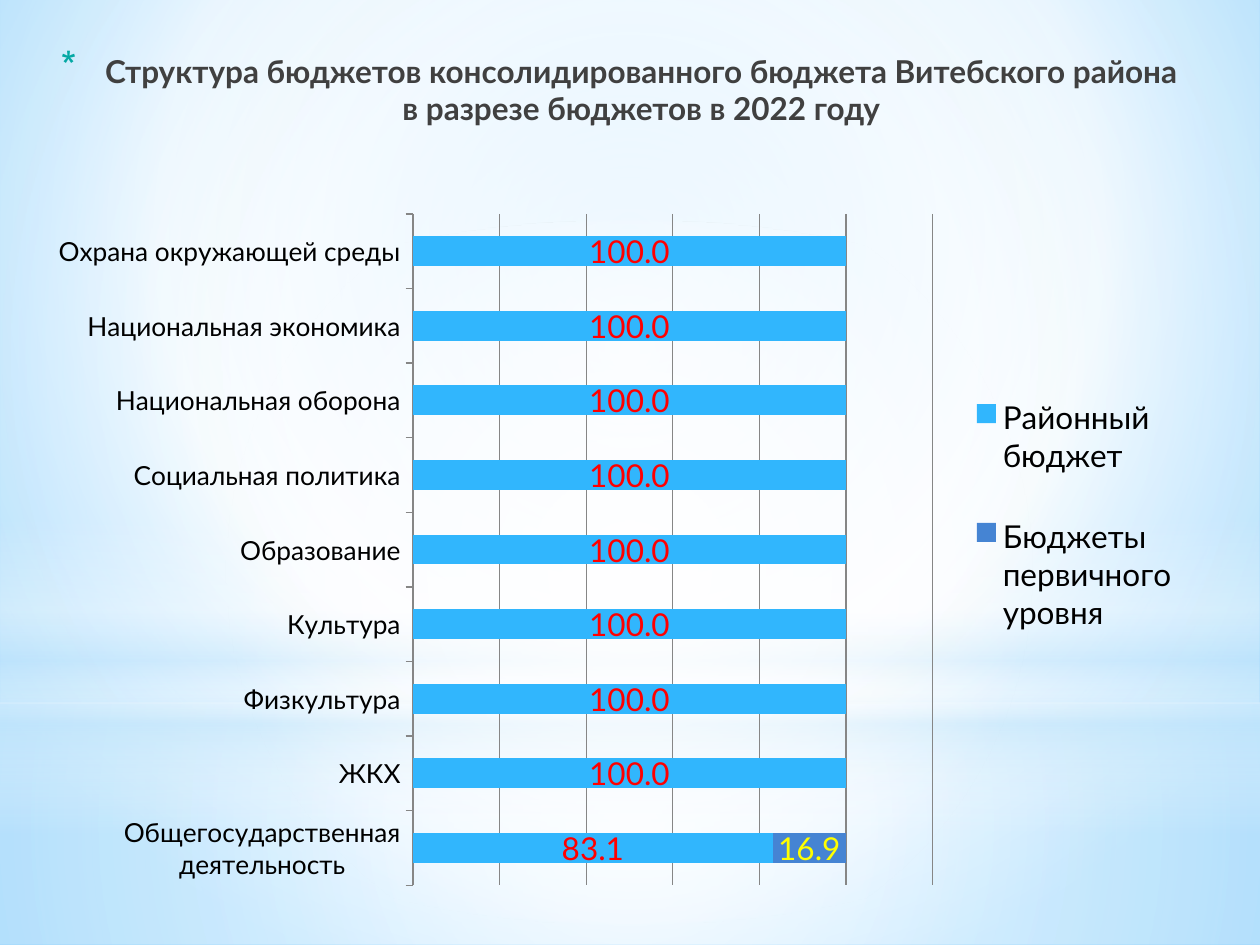
from typing import NamedTuple, Optional

from lxml.etree import SubElement
from pptx import Presentation
from pptx.chart.data import CategoryChartData
from pptx.dml.color import RGBColor
from pptx.enum.chart import (XL_CHART_TYPE, XL_LABEL_POSITION,
                             XL_LEGEND_POSITION, XL_TICK_LABEL_POSITION,
                             XL_TICK_MARK)
from pptx.enum.shapes import MSO_SHAPE
from pptx.enum.text import MSO_ANCHOR, PP_ALIGN
from pptx.oxml import parse_xml
from pptx.oxml.ns import nsdecls, qn
from pptx.util import Inches, Pt

FONT = "Lato"
GRID = "868686"
CENTER = (50, 50, 50, 50)


class Stop(NamedTuple):
    position: int
    color: str
    opacity: int = 100


class Glow(NamedTuple):
    kind: MSO_SHAPE
    top: float
    height: float
    stops: list[Stop]
    focus: Optional[tuple] = CENTER  # None: linear, top to bottom


class Budget(NamedTuple):
    name: str
    values: list
    color: str
    label_color: str


GLOWS = [
    Glow(MSO_SHAPE.RECTANGLE, 5.58, 1.92,
         [Stop(0, "FFFFFF", 91), Stop(37, "FFFFFF", 76), Stop(100, "C6E7FC", 79)]),
    Glow(MSO_SHAPE.RECTANGLE, 0, 5.58,
         [Stop(0, "FFFFFF", 89), Stop(48, "FFFFFF", 62), Stop(100, "C6E7FC", 79)]),
    Glow(MSO_SHAPE.RECTANGLE, 4.12, 2.5,
         [Stop(0, "FFFFFF", 0), Stop(29, "FFFFFF", 30), Stop(45, "C6E7FC", 40),
          Stop(55, "FFFFFF", 26), Stop(65, "C6E7FC", 60), Stop(100, "FFFFFF", 0)], None),
    Glow(MSO_SHAPE.OVAL, 1.75, 5.58, [Stop(0, "FFFFFF"), Stop(56, "FFFFFF", 0)]),
]
SPHERES = ["Общегосударственная деятельность", "ЖКХ", "Физкультура", "Культура",
           "Образование", "Социальная политика", "Национальная оборона",
           "Национальная экономика", "Охрана окружающей среды"]
BUDGETS = [
    Budget("Районный бюджет", [83.1] + [100] * 8, "31B6FD", "FF0000"),
    Budget("Бюджеты первичного уровня", [16.9] + [None] * 8, "4584D3", "FFFF00"),
]


def rgb(color: str) -> RGBColor:
    return RGBColor.from_string(color)


def apply_gradient(owner, stops: list[Stop], focus: Optional[tuple]) -> None:
    """Turn the solid fill of a shape or slide into a gradient."""
    stop_xml = "".join(
        f'<a:gs pos="{s.position * 1000}"><a:srgbClr val="{s.color}">'
        f'<a:alpha val="{s.opacity * 1000}"/></a:srgbClr></a:gs>' for s in stops)
    if focus:
        left, top, right, bottom = (edge * 1000 for edge in focus)
        direction = (f'<a:path path="circle"><a:fillToRect l="{left}" t="{top}" '
                     f'r="{right}" b="{bottom}"/></a:path>')
    else:
        direction = '<a:lin ang="5400000" scaled="0"/>'
    solid = owner.element.find(".//" + qn("a:solidFill"))
    solid.getparent().replace(solid, parse_xml(
        f'<a:gradFill {nsdecls("a")} rotWithShape="1"><a:gsLst>{stop_xml}</a:gsLst>'
        f'{direction}</a:gradFill>'))


def add_glow(slide, glow: Glow) -> None:
    shape = slide.shapes.add_shape(glow.kind, 0, Inches(glow.top),
                                   Inches(10), Inches(glow.height))
    shape.shadow.inherit = False
    shape.line.fill.background()
    shape.fill.solid()
    apply_gradient(shape, glow.stops, glow.focus)


def add_title(slide, text: str) -> None:
    title = slide.shapes.add_textbox(Inches(0.35), Inches(0.36), Inches(9.13), Inches(1.02))
    frame = title.text_frame
    frame.word_wrap = True
    frame.vertical_anchor = MSO_ANCHOR.TOP
    frame.text = text
    heading = frame.paragraphs[0]
    heading.alignment = PP_ALIGN.CENTER
    font = heading.runs[0].font
    font.name, font.size, font.bold = FONT, Pt(18), True
    font.color.rgb = rgb("404040")
    # Hanging asterisk bullet
    properties = heading._p.get_or_add_pPr()
    properties.set("marL", str(Inches(0.35)))
    properties.set("indent", str(-Inches(0.35)))
    bullet_color = SubElement(properties, qn("a:buClr"))
    SubElement(bullet_color, qn("a:srgbClr"), val="04A8A4")
    SubElement(properties, qn("a:buSzPct"), val="128000")
    SubElement(properties, qn("a:buChar"), char="*")


def place_before(follower, x: float, y: float, w: float, h: float, inner: bool) -> None:
    """Fix the place of a chart part, in fractions of the chart."""
    part = follower.getparent()
    for old in part.findall(qn("c:layout")):
        part.remove(old)
    target = '<c:layoutTarget val="inner"/>' if inner else ""
    follower.addprevious(parse_xml(
        f'<c:layout {nsdecls("c")}><c:manualLayout>{target}'
        f'<c:xMode val="edge"/><c:yMode val="edge"/><c:x val="{x}"/><c:y val="{y}"/>'
        f'<c:w val="{w}"/><c:h val="{h}"/></c:manualLayout></c:layout>'))


def format_series(series, budget: Budget) -> None:
    series.format.fill.solid()
    series.format.fill.fore_color.rgb = rgb(budget.color)
    labels = series.data_labels
    labels.show_value = True
    labels.number_format, labels.number_format_is_linked = "0.0", False
    labels.position = XL_LABEL_POSITION.CENTER
    labels.font.name, labels.font.size = FONT, Pt(18)
    labels.font.color.rgb = rgb(budget.label_color)


def add_budget_chart(slide) -> None:
    data = CategoryChartData(number_format="0.0")
    data.categories = SPHERES
    for budget in BUDGETS:
        data.add_series(budget.name, budget.values)
    chart = slide.shapes.add_chart(XL_CHART_TYPE.BAR_STACKED, Inches(0.28), Inches(1.53),
                                   Inches(9.37), Inches(5.61), data).chart
    chart.has_title = False
    chart.font.name, chart.font.size = FONT, Pt(18)
    chart.font.color.rgb = rgb("000000")

    # Bars
    plot = chart.plots[0]
    plot.gap_width, plot.overlap, plot.vary_by_categories = 150, 100, False
    for series, budget in zip(plot.series, BUDGETS):
        format_series(series, budget)

    # Axes
    spheres = chart.category_axis
    spheres.tick_labels.font.size = Pt(15)
    spheres.major_tick_mark = XL_TICK_MARK.OUTSIDE
    spheres.tick_label_position = XL_TICK_LABEL_POSITION.NEXT_TO_AXIS
    spheres.format.line.color.rgb = rgb(GRID)
    shares = chart.value_axis
    shares.visible = False
    shares.minimum_scale, shares.maximum_scale, shares.major_unit = 0, 120, 20
    shares.has_major_gridlines = True
    shares.major_gridlines.format.line.color.rgb = rgb(GRID)

    # Legend and layout
    chart.has_legend = True
    chart.legend.position = XL_LEGEND_POSITION.RIGHT
    chart.legend.include_in_layout = False
    chart_root = chart.element
    place_before(chart_root.find(".//" + qn("c:barChart")), 0.32, 0.03, 0.44, 0.95, True)
    place_before(chart_root.find(".//" + qn("c:legend") + "/" + qn("c:overlay")),
                 0.78, 0.23, 0.2, 0.45, False)


def main() -> None:
    deck = Presentation()
    deck.slide_width, deck.slide_height = Inches(10), Inches(7.5)
    slide = deck.slides.add_slide(deck.slide_layouts[6])

    # Background
    slide.background.fill.solid()
    apply_gradient(slide, [Stop(0, "B0E0FF"), Stop(60, "FFFFFF"), Stop(100, "6BC5FF")],
                   (20, 10, 20, 60))
    for glow in GLOWS:
        add_glow(slide, glow)

    # Content
    add_title(slide, "Структура бюджетов консолидированного бюджета Витебского района "
                     "в разрезе бюджетов в 2022 году")
    add_budget_chart(slide)
    deck.save("out.pptx")


if __name__ == "__main__":
    main()
